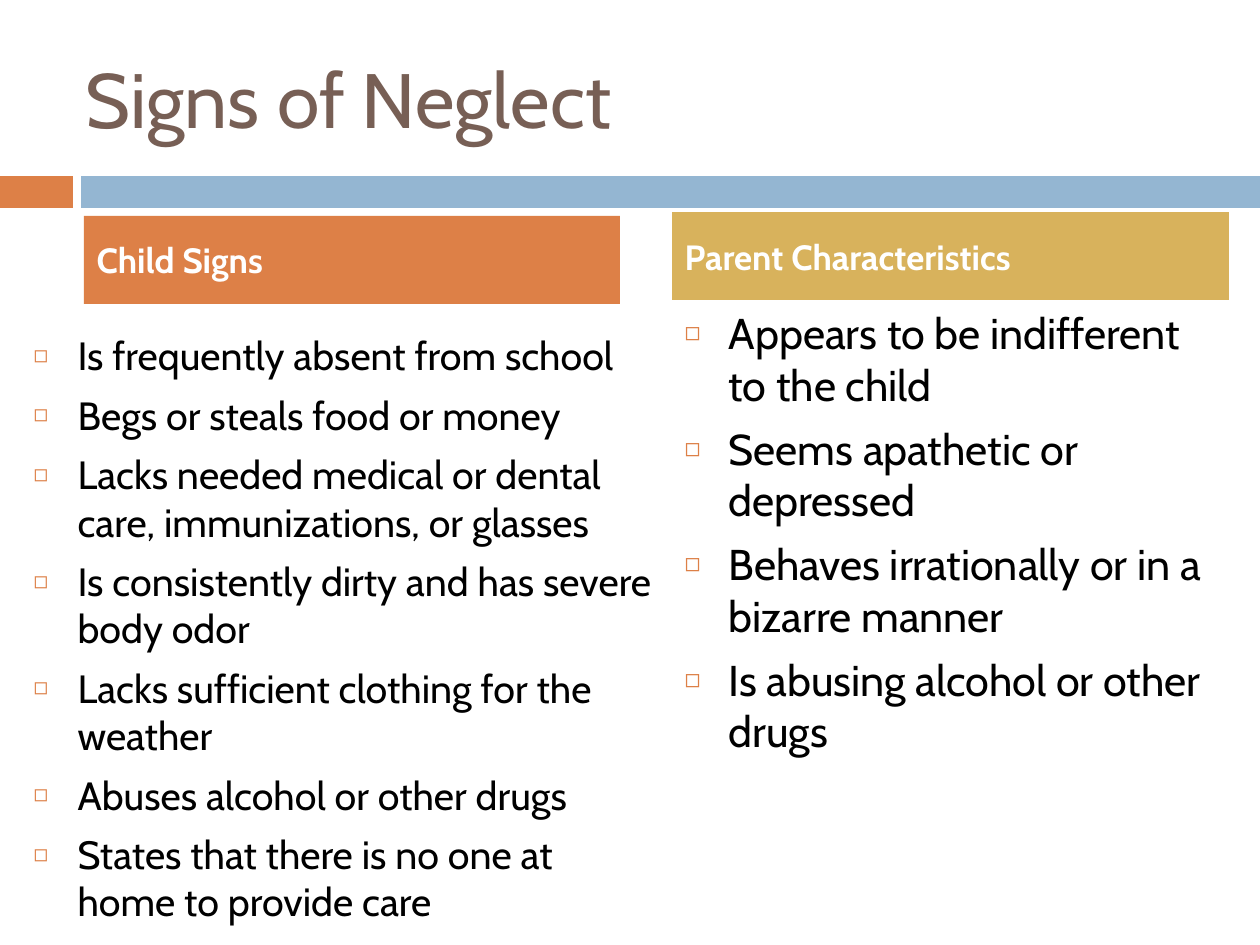
from lxml.etree import SubElement
from pptx import Presentation
from pptx.dml.color import RGBColor
from pptx.enum.shapes import MSO_SHAPE
from pptx.enum.text import MSO_ANCHOR, MSO_AUTO_SIZE, PP_ALIGN
from pptx.oxml.ns import qn
from pptx.util import Emu, Pt

PX_PER_INCH = 126
FONT = "Cabin"
COLORS = {
    "orange": "DD8047",
    "blue": "94B6D2",
    "gold": "D8B25C",
    "brown": "775F55",
    "black": "000000",
    "white": "FFFFFF",
}
HANGING_INDENT = 44

CHILD_SIGNS = [
    "Is frequently absent from school",
    "Begs or steals food or money",
    "Lacks needed medical or dental care, immunizations, or glasses",
    "Is consistently dirty and has severe body odor",
    "Lacks sufficient clothing for the weather",
    "Abuses alcohol or other drugs",
    "States that there is no one at home to provide care",
]
PARENT_CHARACTERISTICS = [
    "Appears to be indifferent to the child",
    "Seems apathetic or depressed",
    "Behaves irrationally or in a bizarre manner",
    "Is abusing alcohol or other drugs",
]


def px(length):
    return Emu(round(length * 914400 / PX_PER_INCH))


def rgb(name):
    return RGBColor.from_string(COLORS[name])


def place(shape, box):
    shape.left, shape.top, shape.width, shape.height = map(px, box)


def fill_solid(shape, color):
    shape.fill.solid()
    shape.fill.fore_color.rgb = rgb(color)


def style_paragraph(para, size, color, bold=False):
    para.alignment = PP_ALIGN.LEFT
    para.font.name = FONT
    para.font.size = Pt(size)
    para.font.bold = bold
    para.font.color.rgb = rgb(color)


def add_bullet(para):
    """Give the paragraph a small square bullet; call before setting its font."""
    properties = para._p.get_or_add_pPr()
    properties.set("marL", str(px(HANGING_INDENT)))
    properties.set("indent", str(-px(HANGING_INDENT)))
    bullet_color = SubElement(properties, qn("a:buClr"))
    SubElement(bullet_color, qn("a:srgbClr"), val=COLORS["orange"])
    SubElement(properties, qn("a:buSzPct"), val="60000")
    SubElement(properties, qn("a:buFont"), typeface=FONT)
    SubElement(properties, qn("a:buChar"), char="◻")


def fill_line(placeholder, box, text, size, color, bold=False):
    """Place a placeholder holding one vertically centred line."""
    place(placeholder, box)
    frame = placeholder.text_frame
    frame.text = text
    frame.auto_size = MSO_AUTO_SIZE.NONE
    frame.vertical_anchor = MSO_ANCHOR.MIDDLE
    para = frame.paragraphs[0]
    para.space_before = Pt(0)
    style_paragraph(para, size, color, bold)


def add_divider(page, box, accent_width, gap):
    left, top, width, height = box
    start = accent_width + gap
    for offset, length, color in (
        (0, accent_width, "orange"),
        (start, width - start, "blue"),
    ):
        bar = page.shapes.add_shape(
            MSO_SHAPE.RECTANGLE, *map(px, (left + offset, top, length, height))
        )
        bar.shadow.inherit = False
        fill_solid(bar, color)
        bar.line.fill.background()


def fill_header(placeholder, box, text, color):
    fill_solid(placeholder, color)
    fill_line(placeholder, box, text, 20, "white", bold=True)


def fill_list(placeholder, box, items, size):
    place(placeholder, box)
    frame = placeholder.text_frame
    frame.text = "\n".join(items)
    frame.auto_size = MSO_AUTO_SIZE.NONE
    frame.vertical_anchor = MSO_ANCHOR.TOP
    for para in frame.paragraphs:
        para.space_before = Pt(7)
        add_bullet(para)
        style_paragraph(para, size, "black")


def main():
    deck = Presentation()
    deck.slide_width, deck.slide_height = px(1260), px(945)
    page = deck.slides.add_slide(deck.slide_layouts.get_by_name("Comparison"))
    title, child_header, child_list, parent_header, parent_list = page.placeholders

    add_divider(page, (0, 176, 1260, 32), accent_width=73, gap=8)
    fill_line(title, (73, 38, 1124, 120), "Signs of Neglect", 44, "brown")
    fill_header(child_header, (84, 216, 536, 88), "Child Signs", "orange")
    fill_list(child_list, (21, 325, 651, 519), CHILD_SIGNS, 22.5)
    fill_header(parent_header, (672, 212, 557, 88), "Parent Characteristics", "gold")
    fill_list(parent_list, (672, 300, 567, 393), PARENT_CHARACTERISTICS, 24.6)

    deck.save("out.pptx")


if __name__ == "__main__":
    main()
